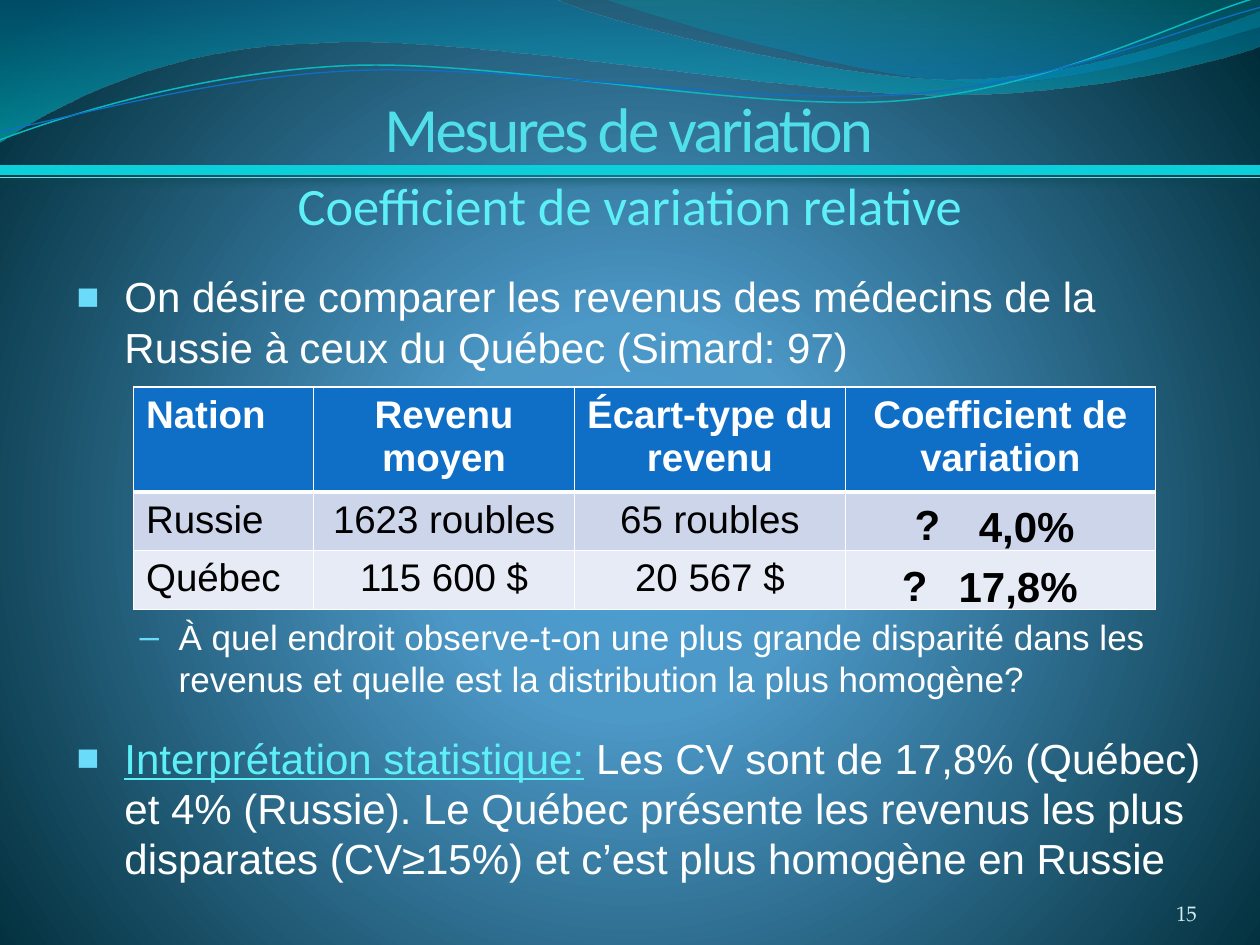
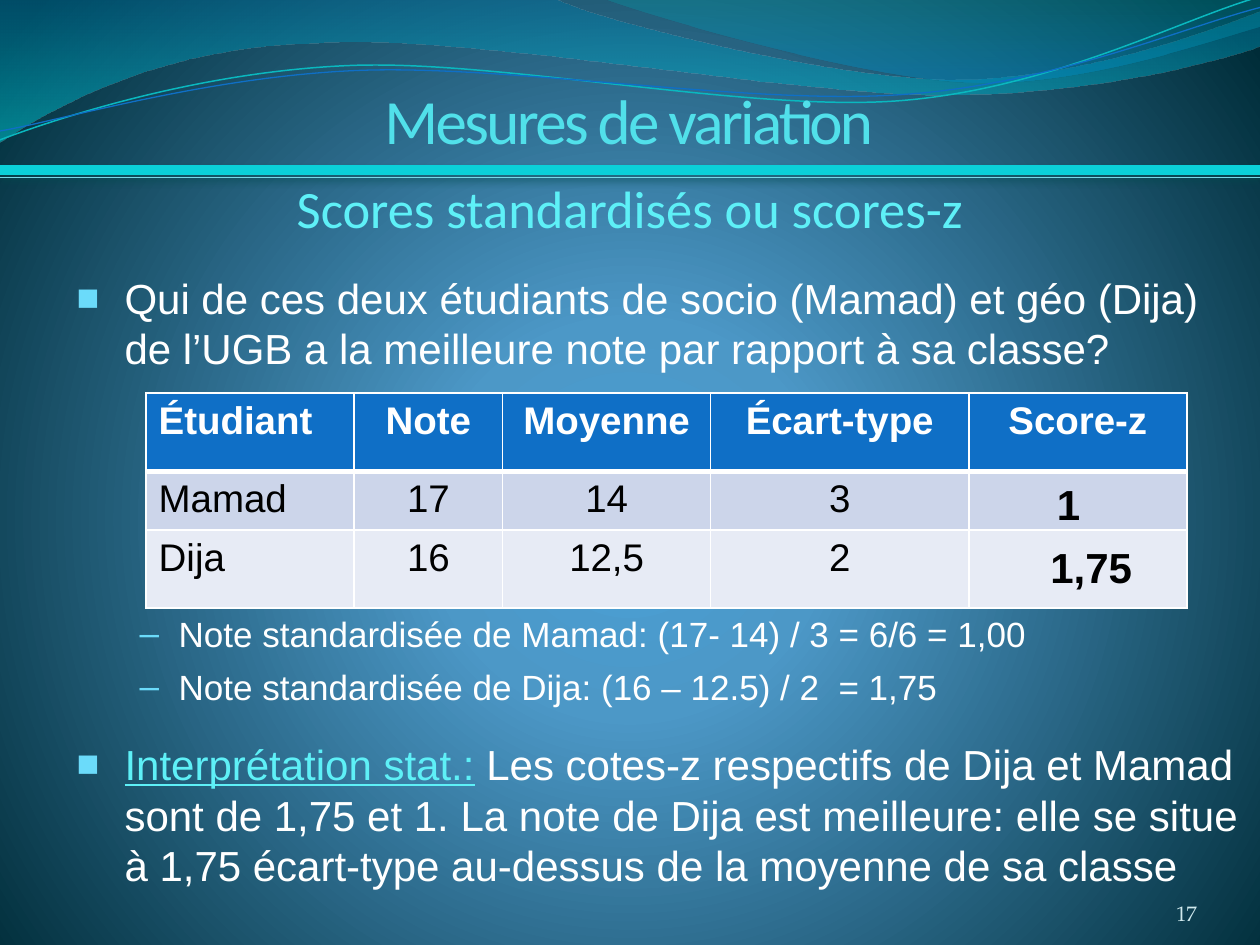
import math

from lxml import etree
from pptx import Presentation
from pptx.dml.color import RGBColor
from pptx.enum import text
from pptx.oxml import ns
from pptx.util import Inches, Pt

WHITE, BLACK, CYAN, BULLET = "FFFFFF", "000000", "5EF0F7", "6BDBFA"
BLUE, BAND_FILLS = "0F6FC6", ("CCD5EA", "E7EBF5")
LEFT, CENTER, RIGHT = text.PP_ALIGN.LEFT, text.PP_ALIGN.CENTER, text.PP_ALIGN.RIGHT
TOP, BOTTOM = text.MSO_ANCHOR.TOP, text.MSO_ANCHOR.BOTTOM
CURVE_ANGLE = 357.3

UPPER_WAVE = [
    [(0, 0)], [(4.4, -0.01)],
    [(4.76, 0.17), (6.64, 0.63), (7.58, 0.63)], [(8.53, 0.63), (9.58, 0.26), (10, 0.09)],
    [(10.01, 0.36)],
    [(9.83, 0.44), (8.7, 0.76), (7.46, 0.75)], [(6.22, 0.75), (3.82, 0.28), (2.57, 0.34)],
    [(1.29, 0.36), (0.46, 0.83), (-0.01, 1.13)], [(0, 0)],
]
RIGHT_WAVE = [
    [(4.79, -0.01)],
    [(5.09, 0.11), (6.82, 0.62), (7.69, 0.65)], [(8.56, 0.69), (9.61, 0.32), (10, 0.21)],
    [(10, 0)], [(4.79, -0.01)],
]
TEAL_CURVE = [
    [(0, 1.11)],
    [(0.48, 0.93), (1.58, 0.57), (2.77, 0.52)], [(3.95, 0.47), (5.93, 0.89), (7.13, 0.8)],
    [(8.33, 0.71), (9.38, 0.15), (9.98, -0.02)],
]
BLUE_CURVE = [
    [(0, 1.04)],
    [(0.47, 0.96), (1.64, 0.61), (2.83, 0.56)], [(4.03, 0.51), (5.97, 0.84), (7.17, 0.75)],
    [(8.36, 0.67), (9.41, 0.21), (10, 0.06)],
]


def color(value):
    return RGBColor.from_string(value)


def add_xml(parent, tag, **attributes):
    values = {key: str(value) for key, value in attributes.items()}
    return etree.SubElement(parent, ns.qn(tag), values)


def add_color(parent, value, alpha=100):
    node = add_xml(parent, "a:srgbClr", val=value)
    if alpha < 100:
        add_xml(node, "a:alpha", val=alpha * 1000)


def fill_gradient(fill, element, stops):
    fill.gradient()
    gradient = element.find(".//" + ns.qn("a:gradFill"))
    for child in list(gradient):
        gradient.remove(child)
    stop_list = add_xml(gradient, "a:gsLst")
    for position, value, alpha in stops:
        add_color(add_xml(stop_list, "a:gs", pos=position * 1000), value, alpha)
    return gradient


def turn(segments, center, degrees):
    cosine, sine = math.cos(math.radians(degrees)), math.sin(math.radians(degrees))
    center_x, center_y = center
    return [[(center_x + (x - center_x) * cosine - (y - center_y) * sine,
              center_y + (x - center_x) * sine + (y - center_y) * cosine)
             for x, y in segment] for segment in segments]


def bend(shape, segments):
    lines = list(shape.element.iter(ns.qn("a:lnTo")))
    for segment in segments[1:]:
        group, lines = lines[:len(segment)], lines[len(segment):]
        if len(group) == 3:
            curve = etree.Element(ns.qn("a:cubicBezTo"))
            group[0].addprevious(curve)
            for line in group:
                curve.append(line[0])
                line.getparent().remove(line)


class Deck:
    """Holds the shared style and the slide being built."""

    def __init__(self):
        self.presentation = Presentation()
        self.presentation.slide_width = Inches(10)
        self.presentation.slide_height = Inches(7.5)

    def start_slide(self):
        self.slide = self.presentation.slides.add_slide(self.presentation.slide_layouts[6])
        stops = [(0, "4AA0D6", 100), (25, "4C98C7", 100), (100, "002C38", 100)]
        gradient = fill_gradient(self.slide.background.fill, self.slide.element, stops)
        circle = add_xml(gradient, "a:path", path="circle")
        add_xml(circle, "a:fillToRect", l=10000, t=110000, r=10000, b=100000)
        self.wave(UPPER_WAVE, [(0, "0074A1", 45), (100, "00C6CF", 55)])
        self.wave(RIGHT_WAVE, [(0, "00A1A9", 30), (80, "008BBF", 45)])
        self.curve(TEAL_CURVE, (4.99, 0.57), "0AB8BF", 0.85)
        self.curve(BLUE_CURVE, (5, 0.59), BLUE, 0.75)

    def freeform(self, segments, close):
        points = [(Inches(x), Inches(y)) for segment in segments for x, y in segment]
        builder = self.slide.shapes.build_freeform(*points[0])
        builder.add_line_segments(points[1:], close=close)
        shape = builder.convert_to_shape()
        bend(shape, segments)
        shape.shadow.inherit = False
        return shape

    def wave(self, segments, stops):
        shape = self.freeform(segments, True)
        shape.line.fill.background()
        gradient = fill_gradient(shape.fill, shape.element, stops)
        add_xml(gradient, "a:lin", ang=5400000, scaled=1)

    def curve(self, segments, center, value, width):
        shape = self.freeform(turn(segments, center, -CURVE_ANGLE), False)
        shape.rotation = CURVE_ANGLE
        shape.fill.background()
        shape.line.color.rgb = color(value)
        shape.line.width = Pt(width)

    def rule(self, y, value, width, shadow):
        line = self.slide.shapes.add_connector(1, 0, Inches(y), Inches(10), Inches(y))
        line.line.color.rgb = color(value)
        line.line.width = Pt(width)
        effects = add_xml(line.element.spPr, "a:effectLst")
        node = add_xml(effects, "a:outerShdw", blurRad=Pt(4.5), dist=Pt(3),
                       dir=5400000, rotWithShape=0)
        add_color(node, shadow, 48)

    def run(self, paragraph, words, size, value, font="Arial", bold=False, underline=False):
        run = paragraph.add_run()
        run.text = words
        run.font.name, run.font.size = font, Pt(size)
        run.font.bold, run.font.underline = bold, underline
        run.font.color.rgb = color(value)
        return run

    def frame(self, box, anchor=TOP, margins=(0.1, 0.05, 0.1, 0.05)):
        frame = self.slide.shapes.add_textbox(*map(Inches, box)).text_frame
        frame.word_wrap = True
        frame.vertical_anchor = anchor
        (frame.margin_left, frame.margin_top,
         frame.margin_right, frame.margin_bottom) = map(Inches, margins)
        return frame

    def label(self, box, words, size, value, align=LEFT, font="Arial", bold=False, **layout):
        paragraph = self.frame(box, **layout).paragraphs[0]
        paragraph.alignment = align
        return self.run(paragraph, words, size, value, font, bold)

    def headings(self, title_top, subtitle_top, subtitle):
        title = self.label((0, title_top, 10, 0.72), "Mesures de variation", 36, "51E0EA",
                           CENTER, "Calibri", anchor=BOTTOM, margins=(0, 0, 0.02, 0))
        title.font._element.set("spc", "-150")
        self.label((0, subtitle_top, 10, 0.61), subtitle, 30, CYAN, CENTER, "Calibri")

    def body(self, box, items):
        frame = self.frame(box)
        for index, (level, before, lead, words) in enumerate(items):
            paragraph = frame.paragraphs[0] if index == 0 else frame.add_paragraph()
            paragraph.level = level
            paragraph.space_before = Pt(before)
            indent, hanging, mark, scale = [(0.38, 0.38, "■", 90), (0.81, 0.31, "–", 100)][level]
            properties = paragraph._p.get_or_add_pPr()
            properties.set("marL", str(Inches(indent)))
            properties.set("indent", str(-Inches(hanging)))
            add_color(add_xml(properties, "a:buClr"), BULLET)
            add_xml(properties, "a:buSzPct", val=scale * 1000)
            add_xml(properties, "a:buFont", typeface="Arial")
            add_xml(properties, "a:buChar", char=mark)
            if lead:
                self.run(paragraph, lead, 24, CYAN, underline=True)
                words = " " + words
            self.run(paragraph, words, (24, 20)[level], WHITE)

    def table(self, left, top, widths, heights, rows):
        box = map(Inches, (left, top, sum(widths), sum(heights)))
        table = self.slide.shapes.add_table(len(rows), len(widths), *box).table
        table.horz_banding = False
        for column, width in zip(table.columns, widths):
            column.width = Inches(width)
        for row, height in zip(table.rows, heights):
            row.height = Inches(height)
        for r, row in enumerate(rows):
            for c, words in enumerate(row):
                self.cell(table.cell(r, c), words, r, c)

    def cell(self, cell, words, row, column):
        header = row == 0
        properties = cell._tc.get_or_add_tcPr()
        for side in "LRTB":
            thick = (header and side == "B") or (row == 1 and side == "T")
            line = add_xml(properties, "a:ln" + side, w=Pt(3 if thick else 1))
            add_color(add_xml(line, "a:solidFill"), WHITE)
        cell.fill.solid()
        cell.fill.fore_color.rgb = color(BLUE if header else BAND_FILLS[row - 1])
        if words:
            paragraph = cell.text_frame.paragraphs[0]
            paragraph.alignment = CENTER if column else LEFT
            self.run(paragraph, words, 22, WHITE if header else BLACK, bold=header)

    def answer(self, box, words, align=LEFT):
        self.label(box, words, 24, BLACK, align, bold=True)

    def finish_slide(self, number):
        self.rule(1.35, "0BD0D9", 6, "024B4E")
        self.rule(1.41, "77D9E8", 0.75, WHITE)
        self.label((8.67, 6.95, 0.83, 0.4), number, 12, "D1EAEE", RIGHT,
                   "TeX Gyre Pagella", anchor=BOTTOM, margins=(0, 0, 0, 0))


def build_variation(deck):
    deck.start_slide()
    deck.body((0.51, 2.1, 9.33, 4.93), [
        (0, 0, "", "On désire comparer les revenus des médecins de la Russie à ceux du Québec "
                   "(Simard: 97)"),
        (1, 139.5, "", "À quel endroit observe-t-on une plus grande disparité dans les revenus "
                       "et quelle est la distribution la plus homogène?"),
        (0, 18.5, "Interprétation statistique:",
         "Les CV sont de 17,8% (Québec) et 4% (Russie). Le Québec présente les revenus "
         "les plus disparates (CV≥15%) et c’est plus homogène en Russie"),
    ])
    deck.headings(0.59, 1.32, "Coefficient de variation relative")
    deck.table(1.06, 3.07, (1.43, 2.07, 2.15, 2.46), (0.82, 0.46, 0.46), [
        ("Nation", "Revenu moyen", "Écart-type du revenu", "Coefficient de variation"),
        ("Russie", "1623 roubles", "65 roubles", ""),
        ("Québec", "115 600 $", "20 567 $", ""),
    ])
    deck.answer((7.51, 4.4, 1.18, 0.5), "17,8%")
    deck.answer((7.67, 3.92, 1.02, 0.5), "4,0%")
    deck.answer((7.16, 3.91, 0.71, 0.5), "?")
    deck.answer((7.06, 4.39, 0.71, 0.5), "?")
    deck.finish_slide("15")


def build_scores(deck):
    deck.start_slide()
    deck.body((0.51, 2.11, 9.49, 5), [
        (0, 0, "", "Qui de ces deux étudiants de socio (Mamad) et géo (Dija) de l’UGB a la "
                   "meilleure note par rapport à sa classe?"),
        (1, 137, "", "Note standardisée de Mamad: (17- 14) / 3 = 6/6 = 1,00"),
        (1, 6, "", "Note standardisée de Dija: (16 – 12.5) / 2  = 1,75"),
        (0, 18, "Interprétation stat.:",
         "Les cotes-z respectifs de Dija et Mamad sont de 1,75 et 1. La note de Dija est "
         "meilleure: elle se situe à 1,75 écart-type au-dessus de la moyenne de sa classe"),
    ])
    deck.headings(0.53, 1.35, "Scores standardisés ou scores-z")
    deck.table(1.16, 3.12, (1.65, 1.18, 1.65, 2.05, 1.73), (0.62, 0.46, 0.62), [
        ("Étudiant", "Note", "Moyenne", "Écart-type", "Score-z"),
        ("Mamad", "17", "14", "3", ""),
        ("Dija", "16", "12,5", "2", ""),
    ])
    deck.answer((7.94, 3.75, 1.08, 0.5), "1", CENTER)
    deck.answer((8.12, 4.25, 1.08, 0.5), "1,75", CENTER)
    deck.finish_slide("17")


def main():
    deck = Deck()
    build_variation(deck)
    build_scores(deck)
    deck.presentation.save("out.pptx")


if __name__ == "__main__":
    main()
